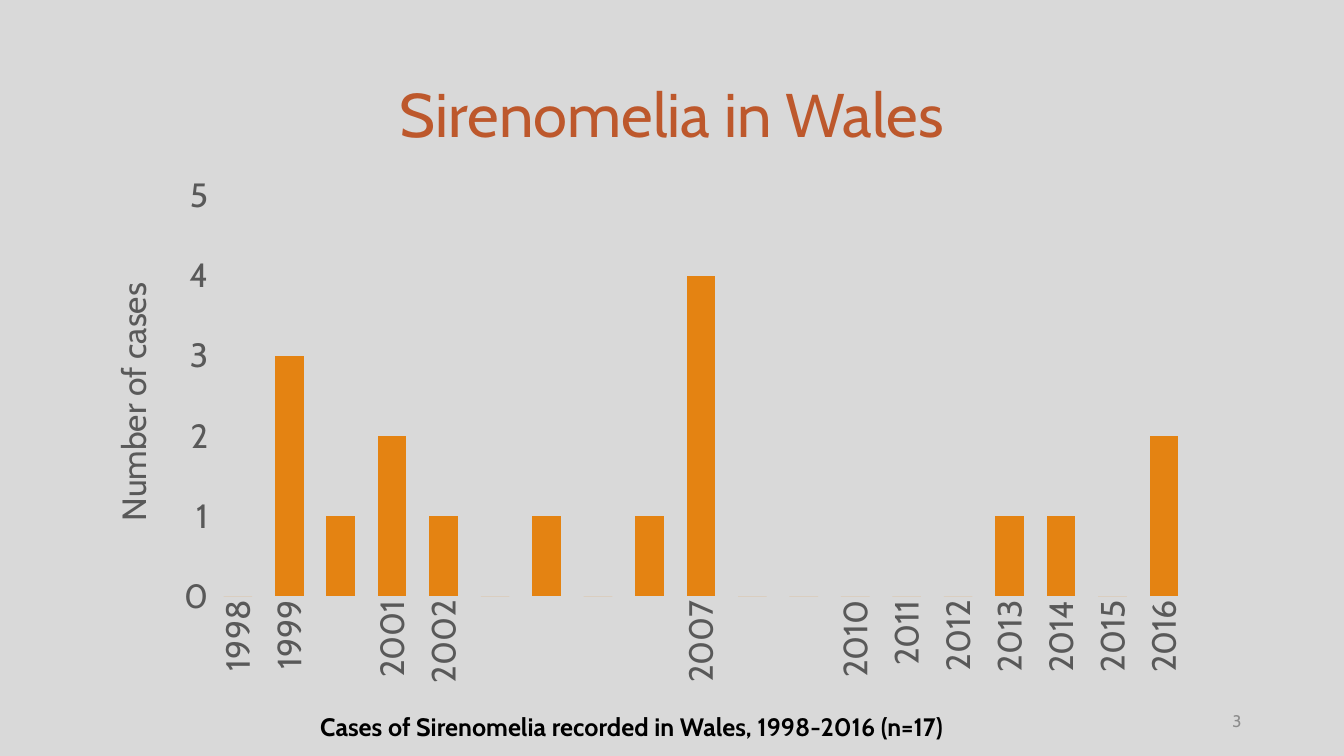
from lxml import etree
from pptx import Presentation
from pptx.chart.data import CategoryChartData
from pptx.dml.color import RGBColor
from pptx.enum.chart import XL_CHART_TYPE, XL_TICK_MARK
from pptx.enum.text import MSO_ANCHOR, PP_ALIGN
from pptx.oxml.ns import qn
from pptx.util import Cm, Pt

COLUMN = XL_CHART_TYPE.COLUMN_CLUSTERED
NO_TICK = XL_TICK_MARK.NONE
MID, TOP = MSO_ANCHOR.MIDDLE, MSO_ANCHOR.TOP
LEFT, CENTER, RIGHT = PP_ALIGN.LEFT, PP_ALIGN.CENTER, PP_ALIGN.RIGHT

FONT = "Cabin"
GREY, PALE, BAR = "595959", "D9D9D9", "E48312"
START = 1998
CASES = [0, 3, 1, 2, 1, 0, 1, 0, 1, 4, 0, 0, 0, 0, 0, 1, 1, 0, 2]
AXIS_NAME = "Number of cases"

# text, box in cm, size, colour, bold, alignment, anchor
TEXTS = [
    ("Sirenomelia in Wales", (2.33, 1.01, 29.21, 3.68),
     44, "BD582C", False, CENTER, MID),
    ("3", (23.92, 17.65, 7.62, 1.01), 12, "8C8C8C", False, RIGHT, MID),
    ("Cases of Sirenomelia recorded in Wales, 1998-2016 (n=17)",
     (7.82, 17.8, 21.41, 1.03), 18, "000000", True, LEFT, TOP),
]
CHART_BOX = (2.33, 4.14, 28.19, 13.51)
PLOT = {"x": 0.107, "y": 0.058, "w": 0.874, "h": 0.748}
NAME_AT = {"x": 0.01, "y": 0.21}


def rgb(code):
    return RGBColor.from_string(code)


def style(font, size, color, bold=False):
    font.name, font.size, font.bold = FONT, Pt(size), bold
    font.color.rgb = rgb(color)


def add_text(slide, text, box, size, color, bold, align, anchor):
    frame = slide.shapes.add_textbox(*map(Cm, box)).text_frame
    frame.word_wrap = True
    frame.vertical_anchor = anchor
    frame.text = text
    par = frame.paragraphs[0]
    par.alignment = align
    style(par.runs[0].font, size, color, bold)


def place(part, spot, index):
    """Give a chart part a fixed place, in fractions of the chart."""
    for old in part.findall(qn("c:layout")):
        part.remove(old)
    layout = etree.Element(qn("c:layout"))
    manual = etree.SubElement(layout, qn("c:manualLayout"))
    rules = {"xMode": "edge", "yMode": "edge", **spot}
    if "w" in spot:
        rules = {"layoutTarget": "inner", **rules}
    for key, val in rules.items():
        etree.SubElement(manual, qn("c:" + key)).set("val", str(val))
    part.insert(index, layout)


def add_cases(slide):
    data = CategoryChartData()
    data.categories = [str(START + i) for i in range(len(CASES))]
    data.add_series("Series 1", CASES)
    chart = slide.shapes.add_chart(COLUMN, *map(Cm, CHART_BOX), data).chart
    chart.has_legend = chart.has_title = False
    style(chart.font, 10, "000000")

    plot = chart.plots[0]
    plot.gap_width, plot.overlap = 80, -27
    plot.vary_by_categories = False
    fill = plot.series[0].format.fill
    fill.solid()
    fill.fore_color.rgb = rgb(BAR)

    years, count = chart.category_axis, chart.value_axis
    for axis in (years, count):
        axis.major_tick_mark = axis.minor_tick_mark = NO_TICK
        axis.has_major_gridlines = False
        style(axis.tick_labels.font, 24, GREY)
    years.format.line.color.rgb = rgb(PALE)
    years.format.line.width = Pt(0.75)
    years._element.find(qn("c:txPr")).find(qn("a:bodyPr")).set("rot", "-5400000")

    count.minimum_scale, count.maximum_scale, count.major_unit = 0, 5, 1
    count.format.line.fill.background()
    frame = count.axis_title.text_frame
    frame.text = AXIS_NAME
    style(frame.paragraphs[0].runs[0].font, 24, GREY)
    body = frame._txBody.find(qn("a:bodyPr"))
    body.set("rot", "-5400000")
    body.set("vert", "horz")

    place(count.axis_title._element, NAME_AT, 1)
    place(chart._chartSpace.chart.plotArea, PLOT, 0)


def main():
    deck = Presentation()
    deck.slide_width, deck.slide_height = Cm(33.87), Cm(19.05)
    slide = deck.slides.add_slide(deck.slide_layouts[6])
    back = slide.background.fill
    back.solid()
    back.fore_color.rgb = rgb(PALE)
    for item in TEXTS:
        add_text(slide, *item)
    add_cases(slide)
    deck.save("out.pptx")


if __name__ == "__main__":
    main()
